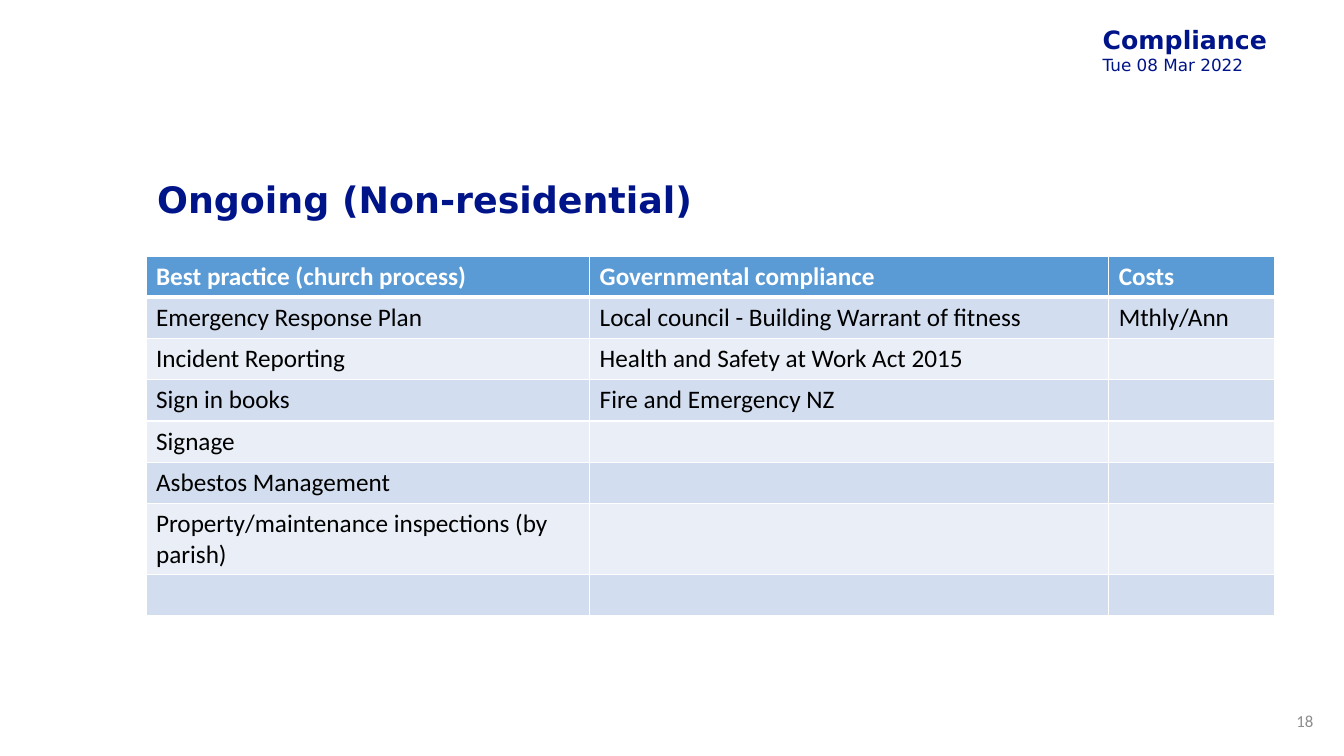
"""Build the slide on ongoing compliance for non-residential property."""
from dataclasses import dataclass

import lxml.etree
import pptx
import pptx.dml.color
import pptx.enum.text
import pptx.oxml.ns
import pptx.util
from pptx.util import Cm

ALIGN = pptx.enum.text.PP_ALIGN
ANCHOR = pptx.enum.text.MSO_ANCHOR


@dataclass(frozen=True)
class Theme:
    """Colours, fonts and type sizes of the slide."""
    navy: str = "001489"
    grey: str = "8C8C8C"
    black: str = "000000"
    white: str = "FFFFFF"
    header_fill: str = "5B9BD5"
    bands: tuple = ("D2DEEF", "EAEFF7")
    display_font: str = "DejaVu Sans"
    body_font: str = "Calibri"
    title_size: int = 26
    body_size: int = 18
    small_size: int = 12


class SlideBuilder:
    """Adds styled elements to the current slide."""

    def __init__(self, page, theme):
        """Keep the slide and its theme."""
        self.page = page
        self.theme = theme

    def format_text(self, para, font, size, colour, bold=False):
        """Style every run of a paragraph."""
        for span in para.runs:
            span.font.name = font
            span.font.size = pptx.util.Pt(size)
            span.font.bold = bold
            span.font.color.rgb = pptx.dml.color.RGBColor.from_string(colour)

    def text_box(self, area, lines, font, colour, align=ALIGN.LEFT, anchor=ANCHOR.MIDDLE, wrap=True):
        """Add a text box with one (text, size, bold) entry per paragraph."""
        box = self.page.shapes.add_textbox(*(Cm(length) for length in area))
        frame = box.text_frame
        frame.word_wrap = wrap
        frame.vertical_anchor = anchor
        frame.text = "\n".join(text for text, _, _ in lines)
        for para, (_, size, bold) in zip(frame.paragraphs, lines):
            para.alignment = align
            self.format_text(para, font, size, colour, bold)
        return frame

    def cell_border(self, cell, side, width):
        """Draw one white edge of a table cell."""
        qn = pptx.oxml.ns.qn
        properties = cell._tc.get_or_add_tcPr()
        line = lxml.etree.SubElement(properties, qn(f"a:ln{side}"), w=str(pptx.util.Pt(width)))
        fill = lxml.etree.SubElement(line, qn("a:solidFill"))
        lxml.etree.SubElement(fill, qn("a:srgbClr"), val=self.theme.white)

    def table(self, left, top, widths, row_height, rows):
        """Add a banded table whose first row is the header."""
        theme = self.theme
        grid = self.page.shapes.add_table(
            len(rows), len(widths), Cm(left), Cm(top),
            Cm(sum(widths)), Cm(row_height * len(rows))).table
        for column, width in zip(grid.columns, widths):
            column.width = Cm(width)
        for index, texts in enumerate(rows):
            header = index == 0
            grid.rows[index].height = Cm(row_height)
            fill = theme.header_fill if header else theme.bands[(index - 1) % 2]
            colour = theme.white if header else theme.black
            edges = {"L": 1, "R": 1, "T": 3 if index == 1 else 1, "B": 3 if header else 1}
            for cell, text in zip(grid.rows[index].cells, texts):
                for side, width in edges.items():
                    self.cell_border(cell, side, width)
                cell.fill.solid()
                cell.fill.fore_color.rgb = pptx.dml.color.RGBColor.from_string(fill)
                cell.text_frame.text = text
                self.format_text(cell.text_frame.paragraphs[0], theme.body_font,
                                 theme.body_size, colour, header)


def main():
    """Build and save the deck."""
    deck = pptx.Presentation()
    deck.slide_width, deck.slide_height = Cm(33.87), Cm(19.05)
    theme = Theme()
    builder = SlideBuilder(deck.slides.add_slide(deck.slide_layouts[6]), theme)

    heading = builder.text_box(
        (27.61, 0.51, 4.55, 2.24),
        [("Compliance", theme.body_size, True), ("Tue 08 Mar 2022", theme.small_size, False)],
        theme.display_font, theme.navy, anchor=ANCHOR.TOP, wrap=False)
    heading.margin_left = heading.margin_right = Cm(0.18)
    heading.margin_top = heading.margin_bottom = Cm(0.1)

    title = builder.text_box(
        (3.71, 3.81, 28.45, 2.57), [("Ongoing (Non-residential)", theme.title_size, True)],
        theme.display_font, theme.navy)
    title.paragraphs[0].line_spacing = 0.9

    builder.table(3.68, 6.45, (11.18, 13.08, 4.19), 1.04, [
        ("Best practice (church process)", "Governmental compliance", "Costs"),
        ("Emergency Response Plan", "Local council - Building Warrant of fitness", "Mthly/Ann"),
        ("Incident Reporting", "Health and Safety at Work Act 2015", ""),
        ("Sign in books", "Fire and Emergency NZ", ""),
        ("Signage", "", ""),
        ("Asbestos Management", "", ""),
        ("Property/maintenance inspections (by parish)", "", ""),
        ("", "", ""),
    ])

    builder.text_box((32.28, 17.65, 1.07, 1.02), [("18", theme.small_size, False)],
                     theme.body_font, theme.grey, align=ALIGN.RIGHT)
    deck.save("out.pptx")


if __name__ == "__main__":
    main()
